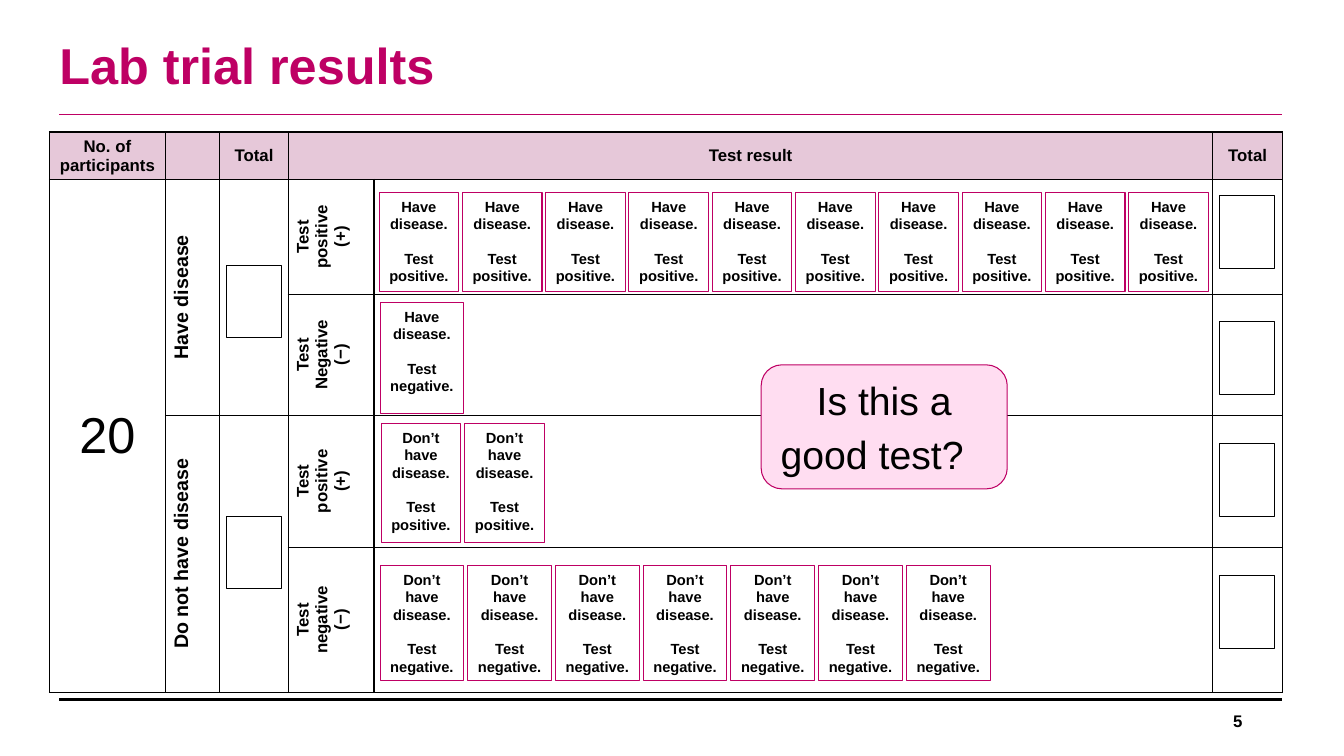
"""Build the slide of lab trial results with a table of test outcome cards."""
import lxml.etree
import pptx
import pptx.dml.color
import pptx.enum.shapes
import pptx.enum.text
import pptx.oxml
import pptx.oxml.ns
import pptx.util

Inches = pptx.util.Inches
Pt = pptx.util.Pt
ALIGN = pptx.enum.text.PP_ALIGN
MIDDLE = pptx.enum.text.MSO_ANCHOR.MIDDLE
TOP = pptx.enum.text.MSO_ANCHOR.TOP
SHAPE = pptx.enum.shapes.MSO_SHAPE
MAGENTA, BLACK, HEADER_PINK, CALLOUT_PINK = "BE0064", "000000", "E6C8D9", "FFDDF1"


def colour(hex_code):
    """Turn a hex string into a colour."""
    return pptx.dml.color.RGBColor.from_string(hex_code)


def write(frame, lines, size, bold=True, hex_code=BLACK, **para_format):
    """Fill a text frame with one formatted paragraph for each line."""
    for index, line in enumerate(lines):
        para = frame.paragraphs[0] if index == 0 else frame.add_paragraph()
        for name, value in {"alignment": ALIGN.CENTER, **para_format}.items():
            setattr(para, name, value)
        span = para.add_run()
        span.text = line
        span.font.color.rgb = colour(hex_code)
        for name, value in {"name": "Arial", "size": Pt(size), "bold": bold}.items():
            setattr(span.font, name, value)


deck = pptx.Presentation()
deck.slide_width, deck.slide_height = Inches(13.33), Inches(7.5)
page = deck.slides.add_slide(deck.slide_layouts[6])

for y, hex_code, width in [(6.94, BLACK, 1.5), (1.14, MAGENTA, 0.75)]:
    rule = page.shapes.add_connector(
        pptx.enum.shapes.MSO_CONNECTOR.STRAIGHT,
        Inches(0.59), Inches(y), Inches(12.72), Inches(y))
    rule.line.color.rgb = colour(hex_code)
    rule.line.width = Pt(width)
    lxml.etree.SubElement(rule._element.spPr, pptx.oxml.ns.qn("a:effectLst"))

column_widths = [1.15, 0.54, 0.68, 0.85, 8.32, 0.69]
row_heights = [0.47, 1.14, 1.2, 1.31, 1.44]
table = page.shapes.add_table(
    5, 6, Inches(0.49), Inches(1.31), Inches(12.23), Inches(5.56)).table
table.first_row = table.horz_banding = False
for column, width in zip(table.columns, column_widths):
    column.width = Inches(width)
for row, height in zip(table.rows, row_heights):
    row.height = Inches(height)

for row in range(5):
    for column in range(6):
        cell = table.cell(row, column)
        cell.vertical_anchor = MIDDLE
        if row == 0:
            cell.fill.solid()
            cell.fill.fore_color.rgb = colour(HEADER_PINK)
            cell.margin_left = cell.margin_right = Inches(0.05)
            cell.margin_top = cell.margin_bottom = Inches(0.03)
        else:
            cell.fill.background()
        for position, side in enumerate(["lnL", "lnR", "lnT", "lnB"]):
            border = pptx.oxml.parse_xml(
                f'<a:{side} {pptx.oxml.ns.nsdecls("a")} w="12700"><a:solidFill>'
                f'<a:srgbClr val="{BLACK}"/></a:solidFill></a:{side}>')
            cell._tc.get_or_add_tcPr().insert(position, border)

for first, last in [((0, 3), (0, 4)), ((1, 0), (4, 0)), ((1, 1), (2, 1)),
                    ((1, 2), (2, 2)), ((3, 1), (4, 1)), ((3, 2), (4, 2))]:
    table.cell(*first).merge(table.cell(*last))

headings = {0: "No. of participants", 2: "Total", 3: "Test result", 5: "Total"}
for column, heading in headings.items():
    write(table.cell(0, column).text_frame, [heading], 12)
write(table.cell(1, 0).text_frame, ["20"], 36, bold=False)

upright_labels = [
    (1, 1, ["Have disease"], 14),
    (3, 1, ["Do not have disease"], 14),
    (1, 3, ["Test", "positive", "(+)"], 12),
    (2, 3, ["Test", "Negative", "(−)"], 12),
    (3, 3, ["Test", "positive", "(+)"], 12),
    (4, 3, ["Test", "negative", "(−)"], 12),
]
for row, column, lines, size in upright_labels:
    cell = table.cell(row, column)
    cell._tc.get_or_add_tcPr().set("vert", "vert270")
    write(cell.text_frame, lines, size)

labels = [
    (0.49, 0.12, 10, 1.11, "Lab trial results", 36,
     {"hex_code": MAGENTA, "alignment": ALIGN.LEFT, "line_spacing": 0.9}),
    (9.42, 6.95, 3, 0.4, "5", 12, {"alignment": ALIGN.RIGHT}),
]
for left, top, width, height, text, size, style in labels:
    box = page.shapes.add_textbox(Inches(left), Inches(top), Inches(width), Inches(height))
    box.text_frame.word_wrap = True
    box.text_frame.vertical_anchor = MIDDLE
    write(box.text_frame, [text], size, **style)

card_rows = [
    (10, 3.76, 1.91, 0.826, 0.79, 0.98, ["Have disease.", "Test positive."]),
    (1, 3.77, 3, 0, 0.83, 1.1, ["Have disease.", "Test negative."]),
    (2, 3.78, 4.2, 0.83, 0.79, 1.18, ["Don’t have disease.", "Test positive."]),
    (7, 3.77, 5.61, 0.87, 0.83, 1.14, ["Don’t have disease.", "Test negative."]),
]
boxes = [(SHAPE.ROUNDED_RECTANGLE, 7.55, 3.62, 2.44, 1.23, CALLOUT_PINK, MAGENTA, 0.75,
          ["Is this a", "good test?"], 28, False, 5, MIDDLE)]
for count, left, top, step, width, height, lines in card_rows:
    for index in range(count):
        boxes.append((SHAPE.RECTANGLE, left + index * step, top, width, height,
                      None, MAGENTA, 0.75, lines, 10.5, True, 12, TOP))
for left, top in [(2.24, 2.63), (2.24, 5.12), (12.09, 1.94),
                  (12.09, 3.19), (12.09, 4.4), (12.09, 5.71)]:
    boxes.append((SHAPE.RECTANGLE, left, top, 0.55, 0.72,
                  None, BLACK, 0.5, [], 12, False, 0, TOP))

for (preset, left, top, width, height, fill, outline, weight,
     lines, size, bold, gap, anchor) in boxes:
    box = page.shapes.add_shape(
        preset, Inches(left), Inches(top), Inches(width), Inches(height))
    box.shadow.inherit = False
    if fill:
        box.fill.solid()
        box.fill.fore_color.rgb = colour(fill)
    else:
        box.fill.background()
    box.line.color.rgb = colour(outline)
    box.line.width = Pt(weight)
    frame = box.text_frame
    frame_format = {"word_wrap": True, "vertical_anchor": anchor,
                    "margin_left": Inches(0.08), "margin_right": Inches(0.08)}
    for name, value in frame_format.items():
        setattr(frame, name, value)
    write(frame, lines, size, bold)
    if lines:
        frame.paragraphs[1].space_before = Pt(gap)
    if fill:
        frame.paragraphs[1]._p.get_or_add_pPr().set("marR", str(Inches(0.24)))

deck.save("out.pptx")
